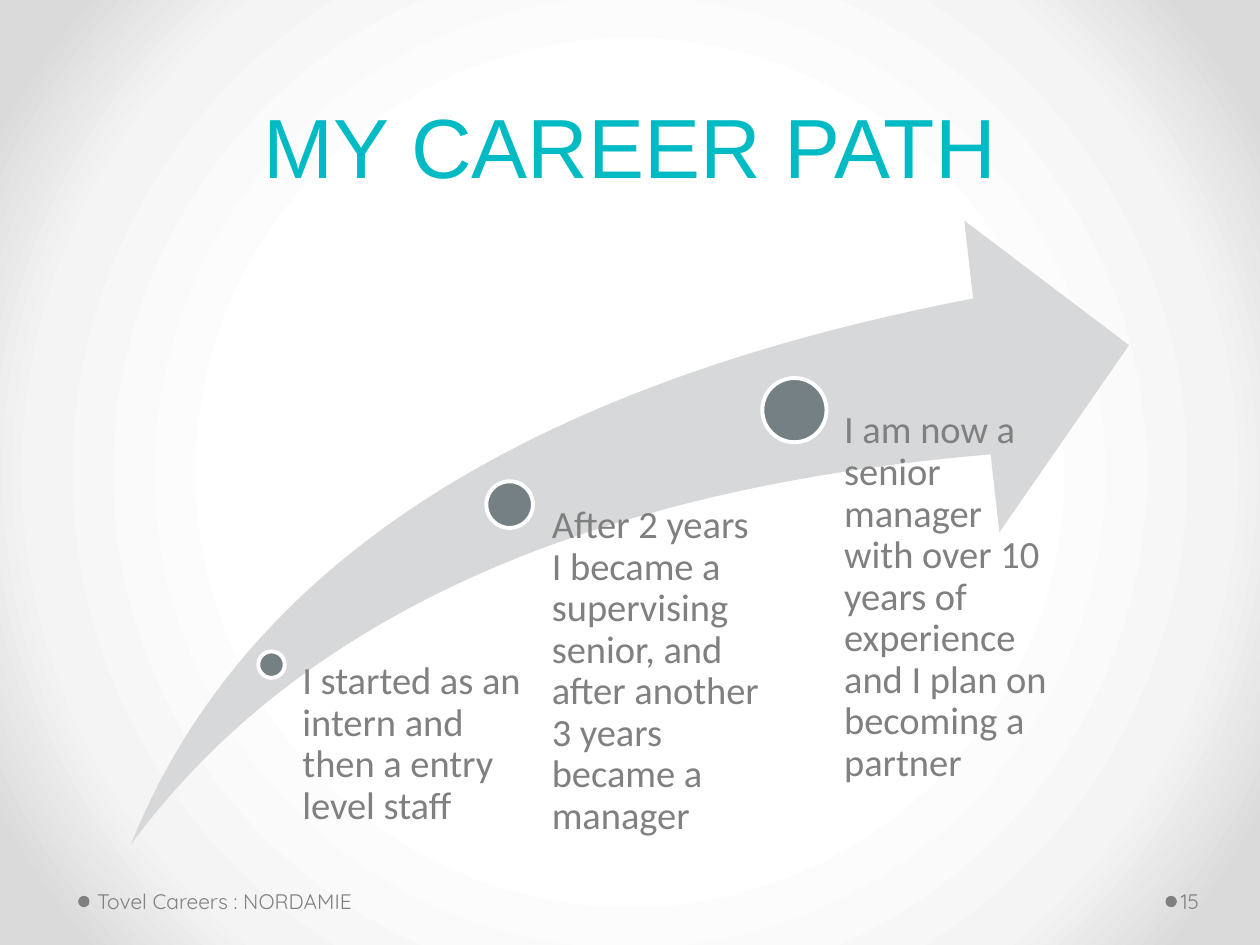
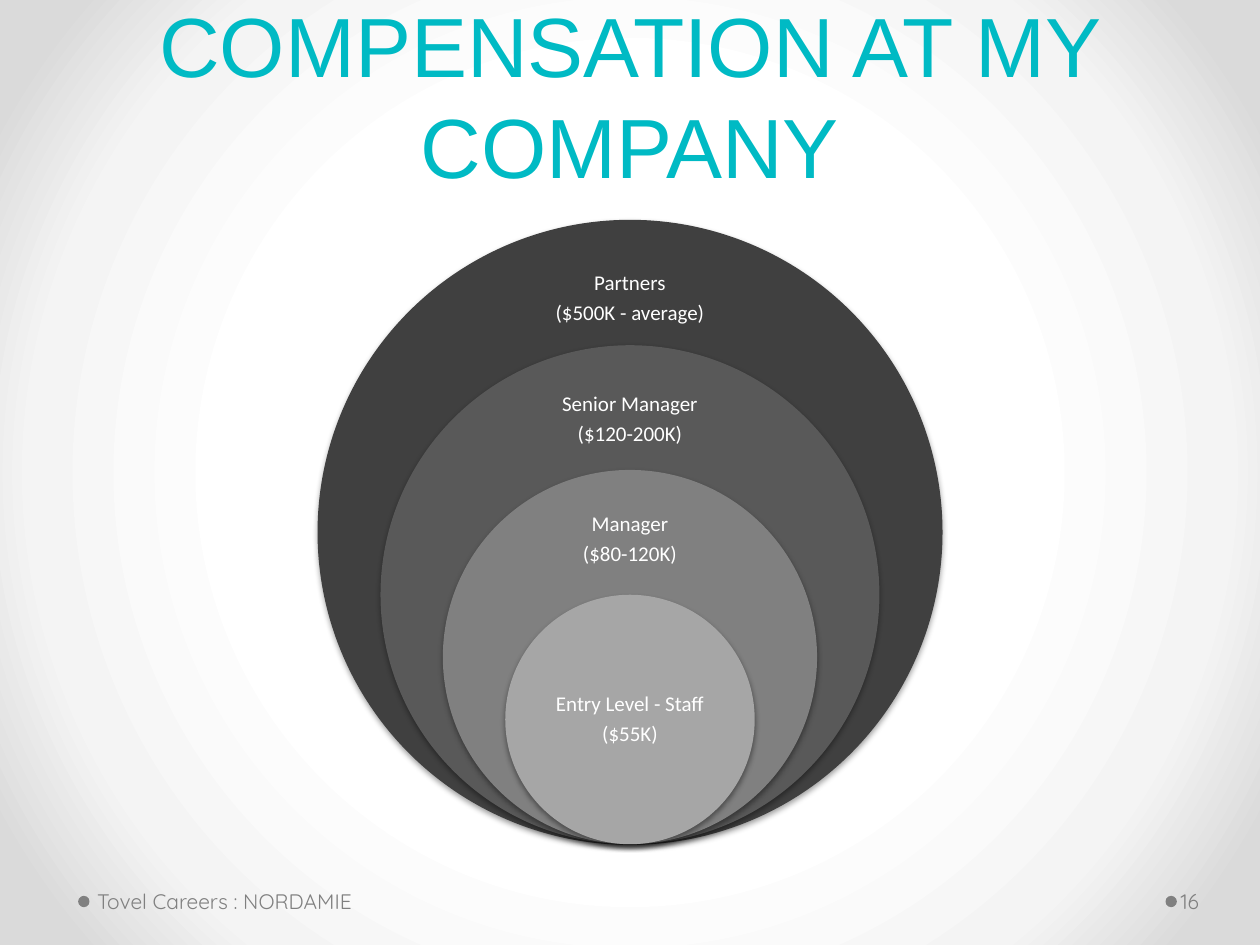
from dataclasses import dataclass

from pptx import Presentation
from pptx.dml.color import RGBColor
from pptx.enum.shapes import MSO_SHAPE
from pptx.enum.text import MSO_ANCHOR, PP_ALIGN
from pptx.oxml import parse_xml
from pptx.util import Inches, Pt

OVAL, SWOOSH = MSO_SHAPE.OVAL, MSO_SHAPE.SWOOSH_ARROW
TOP, MIDDLE, BOTTOM = MSO_ANCHOR.TOP, MSO_ANCHOR.MIDDLE, MSO_ANCHOR.BOTTOM
LEFT, CENTER = PP_ALIGN.LEFT, PP_ALIGN.CENTER
DRAWING_NS = "http://schemas.openxmlformats.org/drawingml/2006/main"
SLIDE_NS = "http://schemas.openxmlformats.org/presentationml/2006/main"

# Content
FOOTER = "Tovel Careers : NORDAMIE"
CAREER_TITLE = "MY CAREER PATH"
PAY_TITLE = "COMPENSATION AT MY COMPANY"

# Dot (left, top, size), text box (left, top, width), left inset, text
MILESTONES = [
    ((2.05, 5.17, 0.21), (2.29, 5.25, 1.85), 0.11,
     "I started as an intern and then a entry level staff"),
    ((3.86, 3.82, 0.37), (4.18, 4.01, 1.9), 0.2,
     "After 2 years I became a supervising senior, "
     "and after another 3 years became a manager"),
    ((6.05, 3, 0.51), (6.43, 3.26, 1.9), 0.27,
     "I am now a senior manager with over 10 years of experience "
     "and I plan on becoming a partner"),
]

# Level, pay, fill, distance from the circle's top to the label's middle
PAY_LEVELS = [
    ("Partners", "($500K - average)", "404040", 0.62),
    ("Senior Manager", "($120-200K)", "595959", 0.59),
    ("Manager", "($80-120K)", "808080", 0.55),
    ("Entry Level - Staff", "($55K)", "A6A6A6", 0.99),
]


@dataclass(frozen=True)
class Theme:
    title: str = "00BAC4"
    gray: str = "808080"
    arrow: str = "D6D8D9"
    dot: str = "758085"
    white: str = "FFFFFF"
    backdrop: tuple = ((50, "FFFFFF"), (76, "F4F4F4"), (92, "DADADA"))
    title_font: str = "Arial"
    body_font: str = "Calibri"
    footer_font: str = "Quicksand"
    title_size: int = 48
    body_size: int = 22
    small_size: int = 12


THEME = Theme()
CENTER_X = 5
DIAGRAM_TOP, DIAGRAM_SIZE = 1.75, 4.95
DIAGRAM_BOTTOM = DIAGRAM_TOP + DIAGRAM_SIZE


# Shared helpers
def add_filled(page, kind, box, fill, line=None, line_width=0.75):
    shape = page.shapes.add_shape(kind, *map(Inches, box))
    shape.shadow.inherit = False
    shape.fill.solid()
    shape.fill.fore_color.rgb = RGBColor.from_string(fill)
    if line:
        shape.line.color.rgb = RGBColor.from_string(line)
        shape.line.width = Pt(line_width)
    else:
        shape.line.fill.background()
    return shape


def add_text(page, box, lines, font, size, color, insets=(0, 0, 0, 0),
             anchor=TOP, align=LEFT, spacing=None, after=0):
    frame = page.shapes.add_textbox(*map(Inches, box)).text_frame
    frame.word_wrap = True
    frame.vertical_anchor = anchor
    (frame.margin_left, frame.margin_top,
     frame.margin_right, frame.margin_bottom) = map(Inches, insets)
    for index, line in enumerate(lines):
        para = frame.add_paragraph() if index else frame.paragraphs[0]
        para.text = line
        para.alignment = align
        para.line_spacing = spacing
        para.space_after = Pt(after)
        para.font.name = font
        para.font.size = Pt(size)
        para.font.color.rgb = RGBColor.from_string(color)


def add_diagram_text(page, box, lines, size, color, **options):
    add_text(page, box, lines, THEME.body_font, size, color,
             spacing=0.9, after=0.35 * size, **options)


def set_backdrop(page):
    stops = "".join(
        f'<a:gs pos="{position * 1000}"><a:srgbClr val="{color}"/></a:gs>'
        for position, color in THEME.backdrop)
    page.element.cSld.insert(0, parse_xml(
        f'<p:bg xmlns:p="{SLIDE_NS}" xmlns:a="{DRAWING_NS}"><p:bgPr>'
        f'<a:gradFill rotWithShape="1"><a:gsLst>{stops}</a:gsLst>'
        '<a:path path="circle">'
        '<a:fillToRect l="50000" t="50000" r="50000" b="50000"/>'
        '</a:path></a:gradFill><a:effectLst/></p:bgPr></p:bg>'))


def add_soft_shadow(shape):
    effects = shape.element.spPr.find(f"{{{DRAWING_NS}}}effectLst")
    effects.append(parse_xml(
        f'<a:outerShdw xmlns:a="{DRAWING_NS}" blurRad="{Pt(3.1)}" '
        f'dist="{Pt(1.6)}" dir="5400000" rotWithShape="0">'
        '<a:srgbClr val="000000"><a:alpha val="38000"/></a:srgbClr>'
        '</a:outerShdw>'))


def add_page(deck, title, number):
    page = deck.slides.add_slide(deck.slide_layouts[6])
    set_backdrop(page)
    for left in (9.25, 0.62):
        add_filled(page, OVAL, (left, 7.11, 0.09, 0.09), THEME.gray)
    add_text(page, (0.5, 0.15, 9, 1.45), [title], THEME.title_font,
             THEME.title_size, THEME.title, insets=(0.1, 0.05, 0.1, 0.05),
             anchor=BOTTOM, align=CENTER, spacing=Pt(58))
    footers = [
        ((0.72, 6.95, 3.11, 0.4), FOOTER, (0.05, 0.05, 0.1, 0.05)),
        ((9.34, 6.95, 0.61, 0.4), str(number), (0.03, 0.05, 0.05, 0.05)),
    ]
    for box, words, insets in footers:
        add_text(page, box, [words], THEME.footer_font, THEME.small_size,
                 THEME.gray, insets=insets, anchor=MIDDLE)
    return page


# Slides
def build_career_path(deck):
    page = add_page(deck, CAREER_TITLE, 15)
    arrow = add_filled(page, SWOOSH, (1.04, DIAGRAM_TOP, 7.92, DIAGRAM_SIZE),
                       THEME.arrow)
    arrow.adjustments[0] = arrow.adjustments[1] = 0.25
    for (dot_left, dot_top, size), (left, top, width), inset, words in MILESTONES:
        add_filled(page, OVAL, (dot_left, dot_top, size, size),
                   THEME.dot, THEME.white, 2.25)
        add_diagram_text(page, (left, top, width, DIAGRAM_BOTTOM - top), [words],
                         THEME.body_size, THEME.gray, insets=(inset, 0, 0, 0))


def build_compensation(deck):
    page = add_page(deck, PAY_TITLE, 16)
    label_width, label_height = 2, 0.56
    for index, (level, pay, fill, label_offset) in enumerate(PAY_LEVELS):
        # Each step is a fifth of the outer circle; all rest on one bottom point
        size = DIAGRAM_SIZE * (1 - index / 5)
        top = DIAGRAM_BOTTOM - size
        outline = fill if index == 0 else None
        circle = add_filled(page, OVAL, (CENTER_X - size / 2, top, size, size),
                            fill, outline)
        add_soft_shadow(circle)
        label_box = (CENTER_X - label_width / 2,
                     top + label_offset - label_height / 2,
                     label_width, label_height)
        add_diagram_text(page, label_box, [level, pay], THEME.small_size,
                         THEME.white, anchor=MIDDLE, align=CENTER)


def main():
    deck = Presentation()
    deck.slide_width, deck.slide_height = Inches(10), Inches(7.5)
    build_career_path(deck)
    build_compensation(deck)
    deck.save("out.pptx")


if __name__ == "__main__":
    main()
